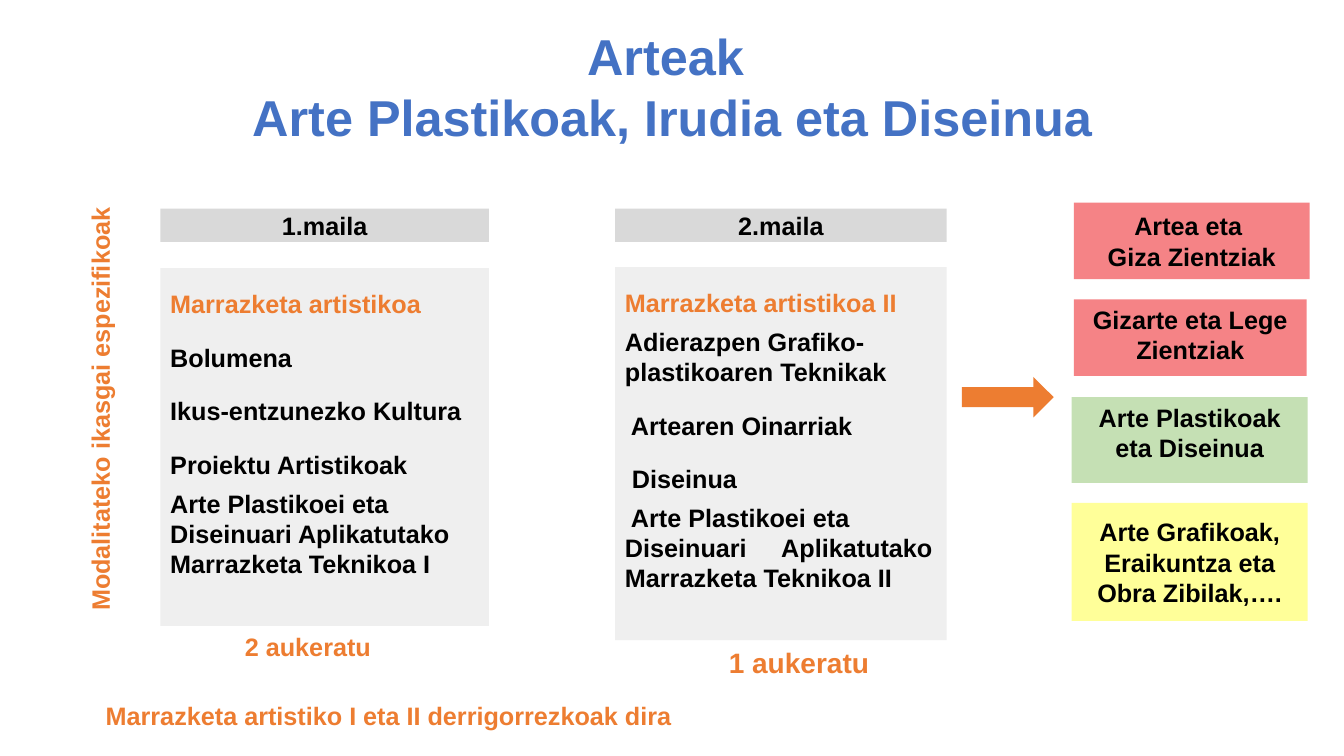
from lxml import etree
from pptx import Presentation
from pptx.dml.color import RGBColor
from pptx.enum.shapes import MSO_SHAPE
from pptx.enum.text import MSO_ANCHOR, PP_ALIGN
from pptx.oxml.ns import qn
from pptx.util import Inches, Pt

RECT, ARROW = MSO_SHAPE.RECTANGLE, MSO_SHAPE.RIGHT_ARROW
LEFT, CENTER = PP_ALIGN.LEFT, PP_ALIGN.CENTER
TOP, MIDDLE = MSO_ANCHOR.TOP, MSO_ANCHOR.MIDDLE

BLACK, ORANGE, BLUE = "000000", "ED7D31", "4472C4"
GRAY, PALE_GRAY = "D9D9D9", "EFEFEF"
RED, GREEN, YELLOW = "F58386", "C5E0B4", "FFFF99"
FONT = "Arial"

# Content
TITLE = ["Arteak ", "Arte Plastikoak, Irudia eta Diseinua"]
SIDE_LABEL = "Modalitateko ikasgai espezifikoak"
FOOTNOTE = "Marrazketa artistiko I eta II derrigorrezkoak dira"

# Each subject: text, line spacing
LEVELS = [
    {"name": "1.maila", "left": 1.59, "width": 3.26, "top": 2.66, "height": 3.55,
     "subjects": [
         ("Marrazketa artistikoa", 1.5),
         ("Bolumena", 1.5),
         ("Ikus-entzunezko Kultura", 1.5),
         ("Proiektu Artistikoak", 1.5),
         ("Arte Plastikoei eta Diseinuari Aplikatutako Marrazketa Teknikoa I", 1)],
     "choice": "2 aukeratu", "choice_left": 2.33, "choice_size": 18},
    {"name": "2.maila", "left": 6.1, "width": 3.29, "top": 2.65, "height": 3.7,
     "subjects": [
         ("Marrazketa artistikoa II", 1.5),
         ("Adierazpen Grafiko-plastikoaren Teknikak", 1),
         (" Artearen Oinarriak", 1.5),
         (" Diseinua", 1.5),
         (" Arte Plastikoei eta Diseinuari\tAplikatutako Marrazketa Teknikoa II", 1)],
     "choice": "1 aukeratu", "choice_left": 7.13, "choice_size": 20},
]
SUBJECT_TAB = 1.55

# Each field: lines, colour, box, anchor
FIELDS = [
    (["Artea eta ", "Giza Zientziak"], RED, (10.65, 2.01, 2.34, 0.76), MIDDLE),
    (["Gizarte eta Lege Zientziak"], RED, (10.65, 2.97, 2.31, 0.76), TOP),
    (["Arte Plastikoak eta Diseinua"], GREEN, (10.63, 3.94, 2.34, 0.85), TOP),
    (["Arte Grafikoak, Eraikuntza eta Obra Zibilak,…."], YELLOW,
     (10.63, 4.99, 2.34, 1.17), MIDDLE),
]

prs = Presentation()
prs.slide_width, prs.slide_height = Inches(13.33), Inches(7.5)
slide = prs.slides.add_slide(prs.slide_layouts[6])


def rgb(color):
    return RGBColor.from_string(color)


def add_block(box, fill, kind=RECT):
    block = slide.shapes.add_shape(kind, *map(Inches, box))
    block.shadow.inherit = False
    block.fill.solid()
    block.fill.fore_color.rgb = rgb(fill)
    block.line.fill.background()
    return block


def write(shape, lines, color=BLACK, size=18, align=CENTER, anchor=TOP):
    frame = shape.text_frame
    frame.word_wrap = True
    frame.vertical_anchor = anchor
    for i, line in enumerate(lines):
        paragraph = frame.paragraphs[0] if i == 0 else frame.add_paragraph()
        paragraph.alignment = align
        run = paragraph.add_run()
        run.text = line
        run.font.name, run.font.size, run.font.bold = FONT, Pt(size), True
        run.font.color.rgb = rgb(color)
    return frame.paragraphs


def add_label(box, lines, color=ORANGE, size=18, align=LEFT):
    label = slide.shapes.add_textbox(*map(Inches, box))
    write(label, lines, color, size, align)
    return label


def add_tab(paragraph, position):
    tabs = etree.SubElement(paragraph._p.get_or_add_pPr(), qn("a:tabLst"))
    etree.SubElement(tabs, qn("a:tab"), pos=str(Inches(position)), algn="l")


# Title and side label
add_label((0.38, 0.2, 12.58, 1.31), TITLE, BLUE, 36, CENTER)
side = add_label((-1.2, 3.86, 4.48, 0.5), [SIDE_LABEL])
side.rotation = 270
side.text_frame.margin_left = Inches(0.29)

# Levels with their subjects
for level in LEVELS:
    left, width, top, height = (level[k] for k in ("left", "width", "top", "height"))
    write(add_block((left, 2.07, width, 0.33), GRAY), [level["name"]], anchor=MIDDLE)

    subjects = level["subjects"]
    panel = add_block((left, top, width, height), PALE_GRAY)
    paragraphs = write(panel, [text for text, _ in subjects], align=LEFT)
    paragraphs[0].runs[0].font.color.rgb = rgb(ORANGE)
    for i, (paragraph, (text, spacing)) in enumerate(zip(paragraphs, subjects)):
        paragraph.line_spacing = float(spacing)
        paragraph.space_before = Pt(6 if i else 0)
        if "\t" in text:
            add_tab(paragraph, SUBJECT_TAB)

    add_label((level["choice_left"], top + height, 1.78, 0.43),
              [level["choice"]], size=level["choice_size"])

# Arrow to the fields of study
add_block((9.54, 3.74, 0.91, 0.4), ORANGE, ARROW)
for lines, color, box, anchor in FIELDS:
    write(add_block(box, color), lines, anchor=anchor)

# Footnote
add_label((0.95, 6.9, 6.54, 0.5), [FOOTNOTE])

prs.save("out.pptx")
